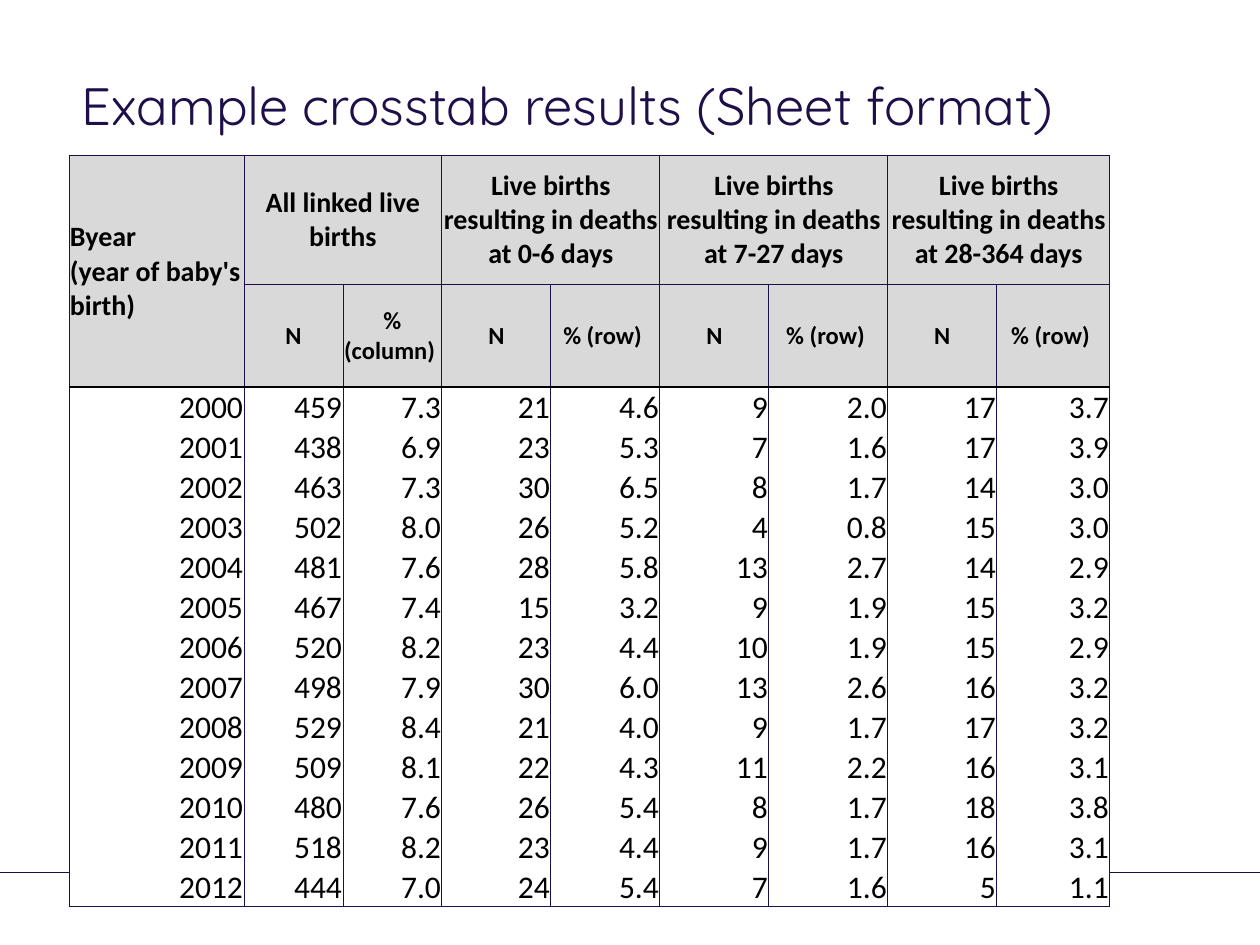
from lxml.etree import SubElement
from pptx import Presentation
from pptx.dml.color import RGBColor
from pptx.enum.shapes import MSO_CONNECTOR
from pptx.enum.text import MSO_ANCHOR, PP_ALIGN
from pptx.oxml.ns import qn
from pptx.util import Emu, Pt

PX = 914400 // 126
COLORS = {"navy": "1E0F49", "rule": "1D0D49", "black": "000000", "header": "D9D9D9",
          "white": "FFFFFF"}

TITLE = "Example crosstab results (Sheet format)"
YEAR_HEADER = "Byear\n(year of baby's birth)"
GROUPS = [
    ("All linked live births", "% (column) "),
    ("Live births resulting in deaths at 0-6 days", "% (row) "),
    ("Live births resulting in deaths at 7-27 days", "% (row) "),
    ("Live births resulting in deaths at 28-364 days", "% (row) "),
]
BIRTHS = [
    ("2000", "459", "7.3", "21", "4.6", "9", "2.0", "17", "3.7"),
    ("2001", "438", "6.9", "23", "5.3", "7", "1.6", "17", "3.9"),
    ("2002", "463", "7.3", "30", "6.5", "8", "1.7", "14", "3.0"),
    ("2003", "502", "8.0", "26", "5.2", "4", "0.8", "15", "3.0"),
    ("2004", "481", "7.6", "28", "5.8", "13", "2.7", "14", "2.9"),
    ("2005", "467", "7.4", "15", "3.2", "9", "1.9", "15", "3.2"),
    ("2006", "520", "8.2", "23", "4.4", "10", "1.9", "15", "2.9"),
    ("2007", "498", "7.9", "30", "6.0", "13", "2.6", "16", "3.2"),
    ("2008", "529", "8.4", "21", "4.0", "9", "1.7", "17", "3.2"),
    ("2009", "509", "8.1", "22", "4.3", "11", "2.2", "16", "3.1"),
    ("2010", "480", "7.6", "26", "5.4", "8", "1.7", "18", "3.8"),
    ("2011", "518", "8.2", "23", "4.4", "9", "1.7", "16", "3.1"),
    ("2012", "444", "7.0", "24", "5.4", "7", "1.6", "5", "1.1"),
]
COLUMN_WIDTHS = [175, 99, 99, 109, 109, 109, 119, 109, 113]
HEADER_HEIGHTS = [129, 103]
BODY_HEIGHT = 40


def px(length):
    return Emu(length * PX)


def color(name):
    return RGBColor.from_string(COLORS[name])


def write(frame, text, size, font="Calibri", ink="black", bold=False, align=PP_ALIGN.LEFT):
    frame.word_wrap = True
    frame.text = text
    for para in frame.paragraphs:
        para.alignment = align
        for span in para.runs:
            span.font.name = font
            span.font.size = Pt(size)
            span.font.bold = bold
            span.font.color.rgb = color(ink)


def set_borders(cell, top, bottom):
    """Draw navy sides; top and bottom are (colour, points) or None for no line."""
    side = ("navy", 0.5)
    properties = cell._tc.get_or_add_tcPr()
    for tag, border in (("lnL", side), ("lnR", side), ("lnT", top), ("lnB", bottom)):
        line = SubElement(properties, qn(f"a:{tag}"))
        if border:
            ink, width = border
            line.set("w", str(Pt(width)))
            fill = SubElement(line, qn("a:solidFill"))
            SubElement(fill, qn("a:srgbClr")).set("val", COLORS[ink])
        else:
            line.set("w", "0")
            SubElement(line, qn("a:noFill"))


def format_cells(table):
    thin, thick = ("navy", 0.5), ("black", 1)
    last = len(table.rows) - 1
    edges = {0: (thin, thin), 1: (thin, thick), 2: (thick, None), last: (None, thin)}
    for r in range(last + 1):
        is_header = r < len(HEADER_HEIGHTS)
        for c in range(len(table.columns)):
            cell = table.cell(r, c)
            top, bottom = edges.get(r, (None, None))
            set_borders(cell, top, thick if (r, c) == (0, 0) else bottom)
            cell.margin_left = cell.margin_right = cell.margin_top = px(1)
            cell.margin_bottom = 0
            cell.fill.solid()
            cell.fill.fore_color.rgb = color("header" if is_header else "white")
            cell.vertical_anchor = MSO_ANCHOR.MIDDLE if is_header else MSO_ANCHOR.BOTTOM


def add_births_table(page):
    heights = HEADER_HEIGHTS + [BODY_HEIGHT] * len(BIRTHS)
    frame = page.shapes.add_table(len(heights), len(COLUMN_WIDTHS), px(69), px(155),
                                  px(sum(COLUMN_WIDTHS)), px(sum(heights)))
    table = frame.table
    table.first_row = table.horz_banding = False
    for column, width in zip(table.columns, COLUMN_WIDTHS):
        column.width = px(width)
    for row, height in zip(table.rows, heights):
        row.height = px(height)
    format_cells(table)

    table.cell(0, 0).merge(table.cell(1, 0))
    write(table.cell(0, 0).text_frame, YEAR_HEADER, 16, bold=True)
    for i, (group, percent) in enumerate(GROUPS):
        c = 1 + 2 * i
        table.cell(0, c).merge(table.cell(0, c + 1))
        for r, k, text, size in ((0, c, group, 16), (1, c, "N", 14), (1, c + 1, percent, 14)):
            write(table.cell(r, k).text_frame, text, size, bold=True, align=PP_ALIGN.CENTER)
    for r, values in enumerate(BIRTHS, start=len(HEADER_HEIGHTS)):
        for c, value in enumerate(values):
            write(table.cell(r, c).text_frame, value, 18, align=PP_ALIGN.RIGHT)


def main():
    deck = Presentation()
    deck.slide_width, deck.slide_height = px(1260), px(945)
    page = deck.slides.add_slide(deck.slide_layouts[6])

    rule = page.shapes.add_connector(MSO_CONNECTOR.STRAIGHT, 0, px(872), px(1260), px(872))
    rule.line.color.rgb = color("rule")
    rule.line.width = Pt(0.25)
    SubElement(rule._element.spPr, qn("a:effectLst"))

    title = page.shapes.add_textbox(px(69), px(67), px(1041), px(154))
    write(title.text_frame, TITLE, 30, font="Quicksand", ink="navy")

    add_births_table(page)
    deck.save("out.pptx")


if __name__ == "__main__":
    main()
